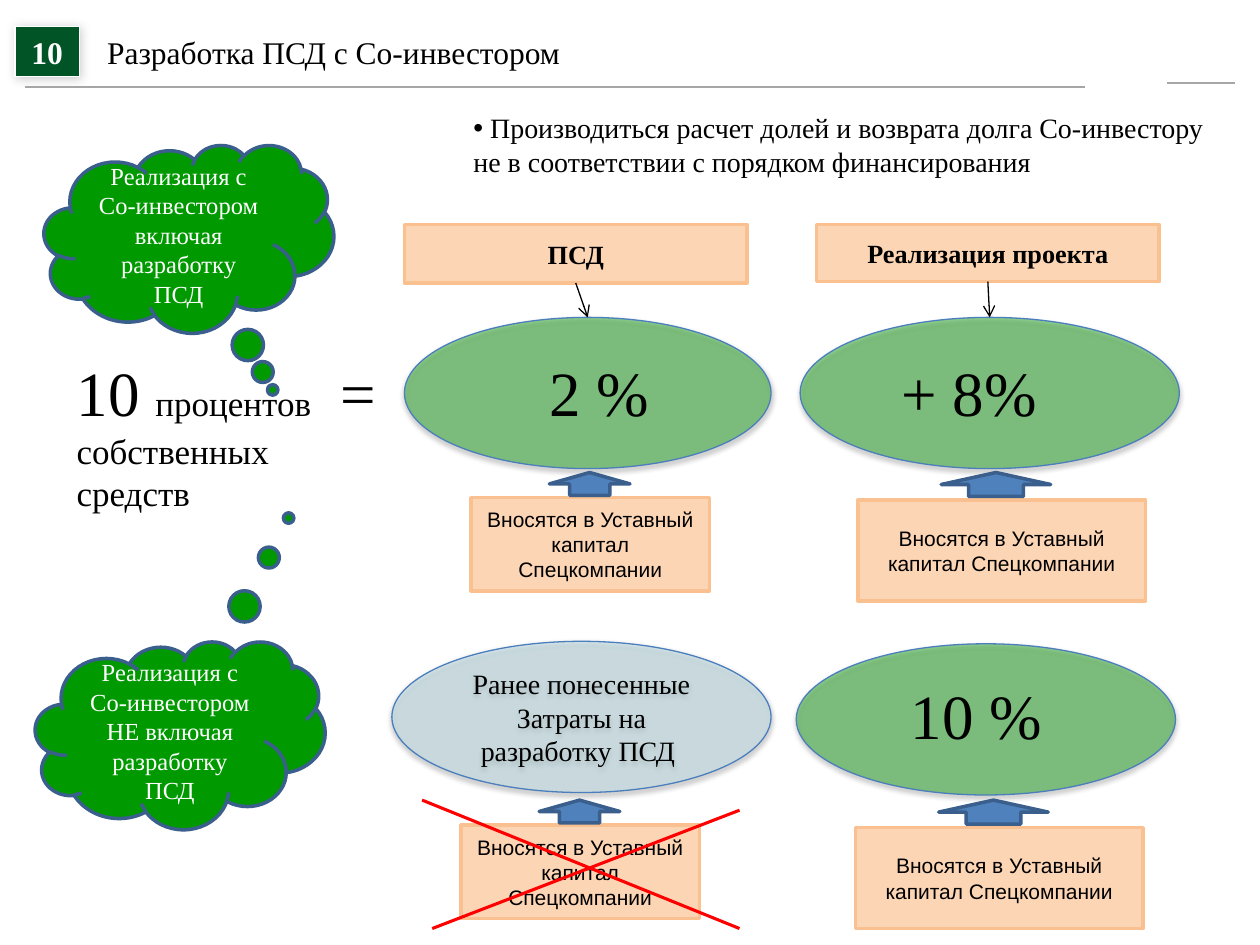
import pptx
import pptx.util
import pptx.dml.color
import pptx.enum.shapes
import pptx.enum.text
import pptx.oxml
import pptx.oxml.ns

Pt = pptx.util.Pt
Shape = pptx.enum.shapes.MSO_SHAPE
Align = pptx.enum.text.PP_ALIGN
Anchor = pptx.enum.text.MSO_ANCHOR
Line = pptx.enum.shapes.MSO_CONNECTOR.STRAIGHT
qn = pptx.oxml.ns.qn
space = pptx.oxml.ns.nsdecls("a")
rgb = pptx.dml.color.RGBColor.from_string

theme = {
    "dark": "005426", "green": "009900", "ice": "B7DEE8", "peach": "FCD5B5",
    "rim": "FAC090", "blue": "4F81BD", "navy": "3A5F8C", "edge": "4B7EBC",
    "gray": "A6A6A6", "red": "FF0000", "black": "000000", "white": "FFFFFF",
    "title": {"name": "Times New Roman", "size": Pt(18), "bold": False},
    "badge": {"name": "Times New Roman", "size": Pt(18), "bold": True},
    "head": {"name": "Times New Roman", "size": Pt(15), "bold": True},
    "huge": {"name": "Times New Roman", "size": Pt(36)},
    "large": {"name": "Times New Roman", "size": Pt(20)},
    "body": {"name": "Times New Roman", "size": Pt(16)},
    "cloud": {"name": "Times New Roman", "size": Pt(14)},
    "note": {"name": "Arial", "size": Pt(12)},
}


def write(frame, rows, ink="black", align=Align.CENTER, anchor=Anchor.MIDDLE, wrap=True):
    for key, val in {"word_wrap": wrap, "vertical_anchor": anchor}.items():
        setattr(frame, key, val)
    for num, row in enumerate(rows):
        para = frame.paragraphs[0] if num == 0 else frame.add_paragraph()
        para.alignment = align
        for text, style in row:
            run = para.add_run()
            run.text = text
            run.font.color.rgb = rgb(theme[ink])
            for key, val in theme[style].items():
                setattr(run.font, key, val)


def draw(kind, box, fill, edge, width, glow=None, alpha=None):
    shape = slide.shapes.add_shape(kind, *map(Pt, box))
    shape.shadow.inherit = False
    shape.fill.solid()
    shape.fill.fore_color.rgb = rgb(theme[fill])
    shape.line.color.rgb = rgb(theme[edge])
    shape.line.width = Pt(width)
    props = shape.element.spPr
    if alpha:
        tint = props.find(qn("a:solidFill")).find(qn("a:srgbClr"))
        tint.append(pptx.oxml.parse_xml(f'<a:alpha {space} val="{alpha * 1000}"/>'))
    if glow:
        dim, blur, dist, turn = glow
        props.find(qn("a:effectLst")).append(pptx.oxml.parse_xml(
            f'<a:outerShdw {space} blurRad="{Pt(blur)}" dist="{Pt(dist)}" dir="{turn * 60000}" '
            f'algn="ctr" rotWithShape="0"><a:srgbClr val="{theme["black"]}">'
            f'<a:alpha val="{dim * 1000}"/></a:srgbClr></a:outerShdw>'))
    return shape


deck = pptx.Presentation()
deck.slide_width, deck.slide_height = Pt(720), Pt(540)
slide = deck.slides.add_slide(deck.slide_layouts[5])

title = slide.shapes.title
for key, val in {"left": 54, "top": 15.1, "width": 275.8, "height": 28.8}.items():
    setattr(title, key, Pt(val))
write(title.text_frame, [[("Разработка ПСД с Со-инвестором", "title")]],
      align=Align.LEFT, anchor=Anchor.TOP, wrap=False)

badge = draw(Shape.RECTANGLE, (8.6, 15.1, 36.7, 28.8), "dark", "white", 0.75, (20, 6, 1, 45))
write(badge.text_frame, [[("10", "badge")]], "white", anchor=Anchor.TOP)

soft = (38, 3.1, 1.6, 90)
ovals = []
for box, fill in [
    ((231.1, 181.4, 209.5, 86.4), "green"),
    ((457.2, 181.4, 216.7, 86.4), "green"),
    ((455, 367.9, 216.7, 86.4), "green"),
    ((223.9, 366.5, 216.7, 86.4), "ice"),
]:
    ovals.append(draw(Shape.OVAL, box, fill, "edge", 0.75, soft, 42))
write(ovals[3].text_frame, [[("Ранее понесенные Затраты на разработку ПСД ", "body")]])

wide = {"size": (164.2, 57.6), "drop": 15.8, "shift": 47.5, "arrow": (62.6, 13.7)}
slim = {"size": (136.1, 53.3), "drop": 14.4, "shift": 44.6, "arrow": (46.1, 13)}
for left, top, form in [
    (490.3, 270, wide), (269.3, 270, slim),
    (488.9, 457.2, wide), (263.5, 457.2, slim),
]:
    note = draw(Shape.TRAPEZOID, (left, top + form["drop"], *form["size"]), "peach", "rim", 2)
    note.adjustments[0] = 0
    write(note.text_frame, [[("Вносятся в Уставный капитал Спецкомпании", "note")]])
    arrow = draw(Shape.DOWN_ARROW, (left + form["shift"], top, *form["arrow"]), "blue", "navy", 2)
    arrow.rotation = 180

for left, top, tail, rows in [
    (25.2, 82.8, (0.289, 0.805),
     ["Реализация с Со-инвестором включая разработку ПСД"]),
    (20.2, 366.5, (0.374, -1.157),
     ["Реализация с", "Со-инвестором НЕ включая разработку ПСД"]),
]:
    cloud = draw(Shape.CLOUD_CALLOUT, (left, top, 165.6, 107.3), "green", "navy", 2)
    for num, val in enumerate(tail):
        cloud.adjustments[num] = val
    write(cloud.text_frame, [[(row, "cloud")] for row in rows], "white")

links = []
for left, high, text, oval in [
    (231.1, 33.5, "ПСД", ovals[0]),
    (466.6, 32.8, "Реализация проекта", ovals[1]),
]:
    head = draw(Shape.RECTANGLE, (left, 128.2, 195.8, high), "peach", "rim", 2)
    write(head.text_frame, [[(text, "head")]])
    links.append((head, oval))

for box, rows in [
    ((36.7, 198.7, 660.2, 99.4),
     [[("10 ", "huge"), ("процентов", "large"), ("\t=\t2 %\t+ 8%", "huge")],
      [("собственных", "large")], [("средств", "large")]]),
    ((513.4, 383, 102.2, 51.1), [[("10 %", "huge")]]),
    ((263.5, 59.8, 442.1, 46.1),
     [[(" Производиться расчет долей и возврата долга Со-инвестору "
        "не в соответствии с порядком финансирования", "body")]]),
]:
    area = slide.shapes.add_textbox(*map(Pt, box))
    props = area.text_frame.paragraphs[0]._p.get_or_add_pPr()
    if len(rows) == 3:
        stops = "".join(f'<a:tab pos="{Pt(pos)}" algn="l"/>' for pos in (151, 270, 471.5))
        props.append(pptx.oxml.parse_xml(f"<a:tabLst {space}>{stops}</a:tabLst>"))
    elif rows[0][0][1] == "body":
        props.append(pptx.oxml.parse_xml(f'<a:buFont {space} typeface="Arial"/>'))
        props.append(pptx.oxml.parse_xml(f'<a:buChar {space} char="•"/>'))
    write(area.text_frame, rows, align=Align.LEFT, anchor=Anchor.TOP)

for ends, ink, width, pair in [
    ((14.4, 49.7, 619.9, 49.7), "gray", 1, None),
    ((666.7, 47.5, 705.6, 47.5), "gray", 1, None),
    ((329, 161.7, 336, 181.4), "black", 0.75, links[0]),
    ((564.5, 161, 565.5, 181.4), "black", 0.75, links[1]),
    ((241.2, 457.2, 422.6, 530.6), "red", 1.75, None),
    ((247, 530.6, 422.6, 463), "red", 1.75, None),
]:
    rule = slide.shapes.add_connector(Line, *map(Pt, ends))
    rule.line.color.rgb = rgb(theme[ink])
    rule.line.width = Pt(width)
    if pair:
        rule.begin_connect(pair[0], 2)
        rule.end_connect(pair[1], 0)
        rule.line._get_or_add_ln().append(
            pptx.oxml.parse_xml(f'<a:tailEnd {space} type="arrow"/>'))
    rule.element.spPr.append(pptx.oxml.parse_xml(f"<a:effectLst {space}/>"))

deck.save("out.pptx")
